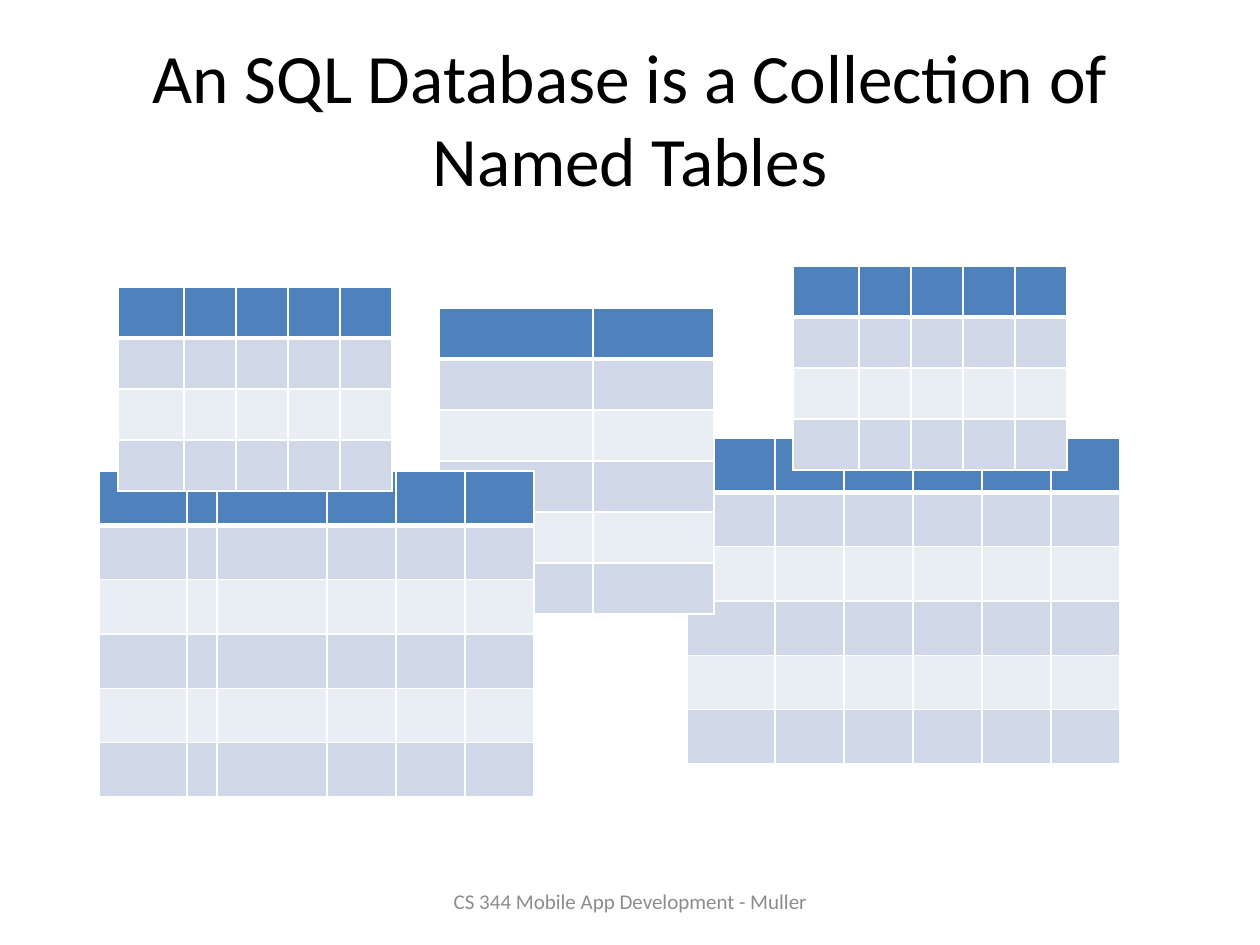
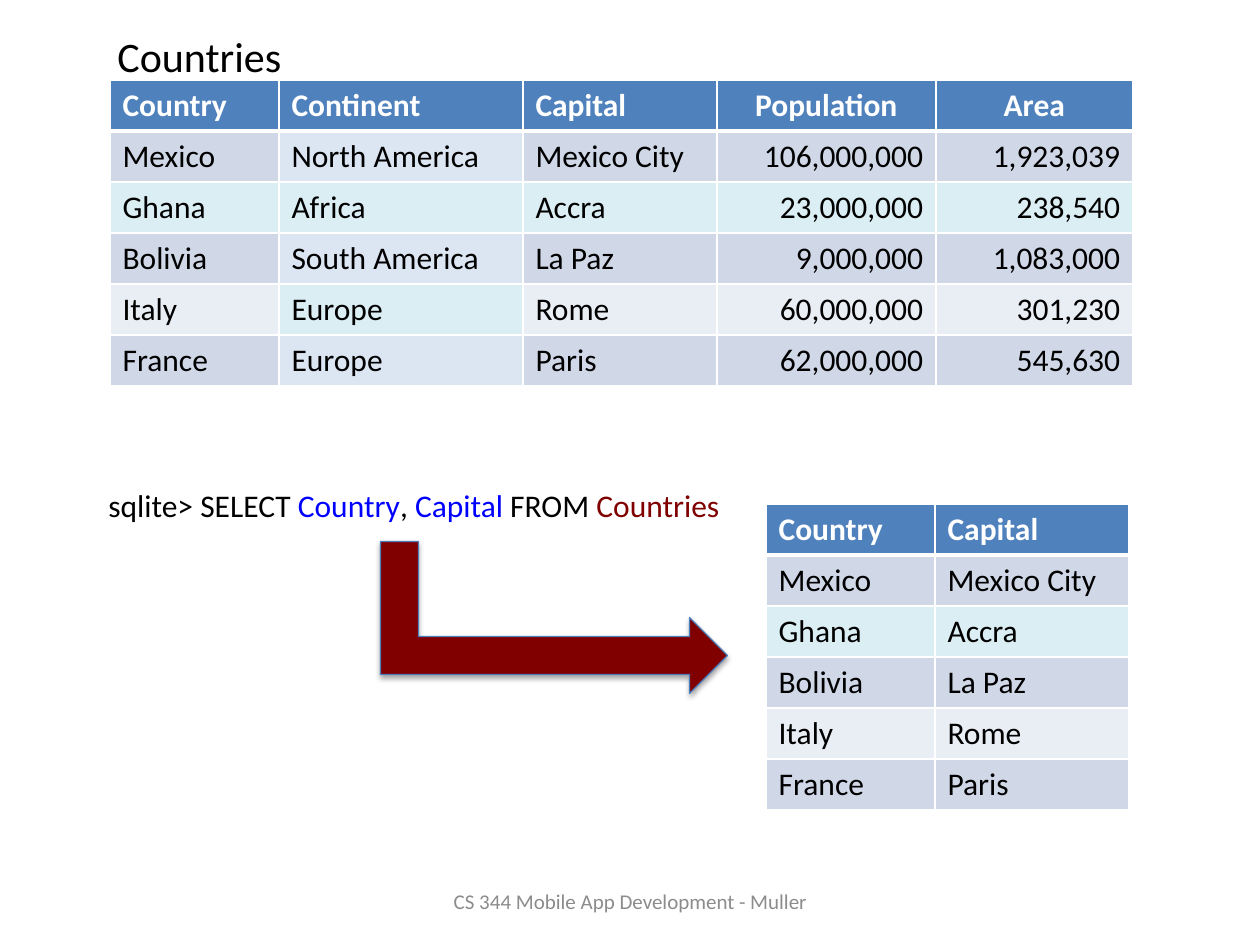
from dataclasses import dataclass
from typing import Any

from lxml.etree import SubElement
from pptx import Presentation
from pptx.dml.color import RGBColor
from pptx.enum.shapes import MSO_SHAPE as Shape
from pptx.enum.text import MSO_ANCHOR as Anchor, PP_ALIGN as Align
from pptx.oxml.ns import qn
from pptx.util import Emu, Pt

SCALE = 914400 / 126
FONT = "Calibri"
BLACK = RGBColor(0, 0, 0)
WHITE = RGBColor(255, 255, 255)
GRAY = RGBColor(0x8C, 0x8C, 0x8C)
HEAD = RGBColor(0x4F, 0x81, 0xBD)
BAND = RGBColor(0xD0, 0xD8, 0xE8)
PALE = RGBColor(0xE9, 0xED, 0xF4)
SKY = RGBColor(0xDC, 0xE6, 0xF2)
AQUA = RGBColor(0xDB, 0xEE, 0xF4)
BLUE = RGBColor(0, 0, 255)
MAROON = RGBColor(0x80, 0, 0)
EDGE = RGBColor(0x4B, 0x7E, 0xBC)

Run = tuple[str, RGBColor]


@dataclass(frozen=True)
class Box:
    left: int
    top: int
    width: int
    height: int


@dataclass(frozen=True)
class Label:
    box: Box
    runs: list[Run]
    size: float
    align: Align = Align.LEFT
    anchor: Anchor = Anchor.TOP
    wrap: bool = False


@dataclass(frozen=True)
class Grid:
    left: int
    top: int
    height: int
    cols: list[int]
    rows: list[list[str]]
    hot_row: int = -1
    hot_col: int = -1


def px(count: float) -> Emu:
    return Emu(round(count * SCALE))


def place(box: Box) -> tuple[Emu, ...]:
    return px(box.left), px(box.top), px(box.width), px(box.height)


def apply(target: Any, values: dict[str, Any]) -> None:
    for name, value in values.items():
        setattr(target, name, value)


def write(para: Any, runs: list[Run], size: float, align: Align, bold: bool = False) -> None:
    para.alignment = align
    for text, color in runs:
        run = para.add_run()
        run.text = text
        apply(run.font, {"name": FONT, "size": Pt(size), "bold": bold})
        run.font.color.rgb = color


def add_label(slide: Any, label: Label) -> None:
    frame = slide.shapes.add_textbox(*place(label.box)).text_frame
    apply(frame, {"word_wrap": label.wrap, "vertical_anchor": label.anchor})
    write(frame.paragraphs[0], label.runs, label.size, label.align)


def add_edges(cell: Any, widths: dict[str, float]) -> None:
    """Put white borders before the cell's fill, as the schema orders them."""
    props = cell._tc.get_or_add_tcPr()
    for spot, (side, width) in enumerate(widths.items()):
        line = SubElement(props, qn(f"a:ln{side}"), w=str(Pt(width)))
        SubElement(SubElement(line, qn("a:solidFill")), qn("a:srgbClr"), val=str(WHITE))
        props.insert(spot, line)


def pick_fill(grid: Grid, row: int, col: int) -> RGBColor:
    if row == 0:
        return HEAD
    if row % 2:
        return SKY if col == grid.hot_col else BAND
    return AQUA if row == grid.hot_row or col == grid.hot_col else PALE


def add_grid(slide: Any, grid: Grid) -> None:
    count = len(grid.rows)
    box = Box(grid.left, grid.top, sum(grid.cols), grid.height)
    table = slide.shapes.add_table(count, len(grid.cols), *place(box)).table
    for col, width in zip(table.columns, grid.cols):
        col.width = px(width)
    for r, texts in enumerate(grid.rows):
        table.rows[r].height = px(grid.height / count)
        head = r == 0
        for c, text in enumerate(texts):
            cell = table.cell(r, c)
            cell.fill.solid()
            cell.fill.fore_color.rgb = pick_fill(grid, r, c)
            add_edges(cell, {"L": 1, "R": 1, "T": 3 if r == 1 else 1, "B": 3 if head else 1})
            if text:
                digits = grid.rows[1][c][0].isdigit()
                align = (Align.CENTER if head else Align.RIGHT) if digits else Align.LEFT
                write(cell.text_frame.paragraphs[0], [(text, WHITE if head else BLACK)],
                      18, align, head)


def add_arrow(slide: Any, box: Box) -> None:
    arrow = slide.shapes.add_shape(Shape.BENT_UP_ARROW, *place(box))
    arrow.rotation = 90
    arrow.fill.solid()
    arrow.fill.fore_color.rgb = MAROON
    arrow.line.color.rgb = EDGE
    arrow.line.width = Pt(0.75)
    arrow.shadow.inherit = False
    glow = SubElement(arrow._element.spPr.find(qn("a:effectLst")), qn("a:outerShdw"),
                      blurRad=str(Pt(3.1)), dist=str(Pt(1.8)), dir="5400000", rotWithShape="0")
    tint = SubElement(glow, qn("a:srgbClr"), val=str(BLACK))
    SubElement(tint, qn("a:alpha"), val="35000")


def blank(rows: int, cols: list[int]) -> list[list[str]]:
    return [[""] * len(cols) for _ in range(rows)]


TITLE = Label(Box(63, 38, 1134, 158), [("An SQL Database is a Collection of Named Tables", BLACK)],
              39.6, Align.CENTER, Anchor.MIDDLE, True)
FOOTER = Label(Box(431, 876, 399, 50), [("CS 344 Mobile App Development - Muller", GRAY)],
               12, Align.CENTER, Anchor.MIDDLE, True)
NAME = Label(Box(105, 24, 192, 63), [("Countries", BLACK)], 24)
QUERY = Label(Box(96, 480, 640, 50), [
    ("sqlite> SELECT ", BLACK), ("Country", BLUE), (", ", BLACK),
    ("Capital", BLUE), (" FROM ", BLACK), ("Countries", MAROON)], 18)

WIDE = [88] + [69] * 5
SPLIT = [88, 30, 110, 69, 69, 69]
SMALL = [66] + [52] * 4
PAIR = [154, 121]
STACK = [
    Grid(687, 438, 326, WIDE, blank(6, WIDE)),
    Grid(439, 308, 306, PAIR, blank(6, PAIR)),
    Grid(793, 266, 204, SMALL, blank(4, SMALL)),
    Grid(99, 471, 326, SPLIT, blank(6, SPLIT)),
    Grid(118, 287, 204, SMALL, blank(4, SMALL)),
]

LANDS = [
    ["Country", "Continent", "Capital", "Population", "Area"],
    ["Mexico", "North America", "Mexico City", "106,000,000", "1,923,039"],
    ["Ghana", "Africa", "Accra", "23,000,000", "238,540"],
    ["Bolivia", "South America", "La Paz", "9,000,000", "1,083,000"],
    ["Italy", "Europe", "Rome", "60,000,000", "301,230"],
    ["France", "Europe", "Paris", "62,000,000", "545,630"],
]
SOURCE = Grid(110, 80, 306, [169, 244, 194, 219, 197], LANDS, hot_row=2, hot_col=1)
RESULT = Grid(766, 504, 306, [169, 194], [[row[0], row[2]] for row in LANDS], hot_row=2)


def add_slide(deck: Any) -> Any:
    slide = deck.slides.add_slide(deck.slide_layouts[6])
    add_label(slide, FOOTER)
    return slide


def main() -> None:
    deck = Presentation()
    apply(deck, {"slide_width": px(1260), "slide_height": px(945)})

    tables = add_slide(deck)
    add_label(tables, TITLE)
    for grid in STACK:
        add_grid(tables, grid)

    select = add_slide(deck)
    add_grid(select, SOURCE)
    add_label(select, NAME)
    add_label(select, QUERY)
    add_grid(select, RESULT)
    add_arrow(select, Box(478, 444, 152, 347))

    deck.save("out.pptx")


if __name__ == "__main__":
    main()
